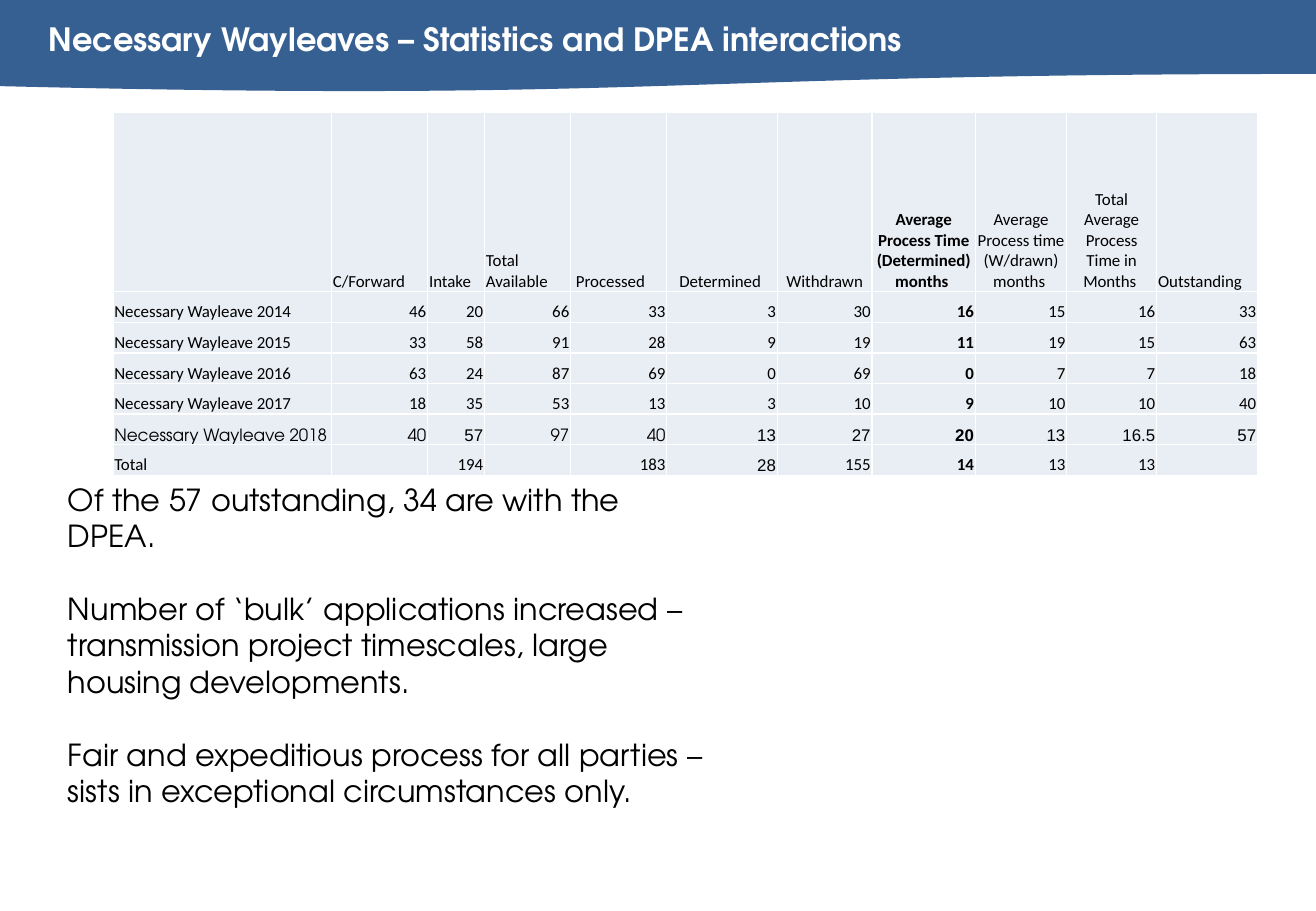
from lxml.etree import SubElement
from pptx import Presentation
from pptx.dml.color import RGBColor
from pptx.enum.shapes import MSO_SHAPE
from pptx.enum.text import MSO_ANCHOR, MSO_AUTO_SIZE, PP_ALIGN
from pptx.oxml.ns import qn
from pptx.util import Cm, Pt

TITLE = "Necessary Wayleaves – Statistics and DPEA interactions"
NOTES = [
    "Of the 57 outstanding, 34 are with the DPEA.",
    "Number of ‘bulk’ applications increased – transmission project "
    "timescales, large housing developments.",
    "Fair and expeditious process for all parties – sists in exceptional "
    "circumstances only.",
]
ROWS = [
    ("", "C/Forward", "Intake", "Total Available", " Processed",
     "Determined ", "Withdrawn", "Average Process Time (Determined) months ",
     "Average Process time (W/drawn) months ",
     "Total Average Process Time in Months ", "Outstanding"),
    ("Necessary Wayleave 2014", 46, 20, 66, 33, 3, 30, 16, 15, 16, 33),
    ("Necessary Wayleave 2015", 33, 58, 91, 28, 9, 19, 11, 19, 15, 63),
    ("Necessary Wayleave 2016", 63, 24, 87, 69, 0, 69, 0, 7, 7, 18),
    ("Necessary Wayleave 2017", 18, 35, 53, 13, 3, 10, 9, 10, 10, 40),
    ("Necessary Wayleave 2018", 40, 57, 97, 40, 13, 27, 20, 13, 16.5, 57),
    ("Total", "", 194, "", 183, 28, 155, 14, 13, 13, ""),
]
WIDTHS = [4.57, 2.01, 1.19, 1.8, 2.01, 2.31, 1.98, 2.16, 1.91, 1.88, 2.11]
HEAD, LINE = 3.76, 0.64
BOLD = 7
CENTRED = range(5, 10)
COLORS = {"banner": "376092", "cell": "E9EDF4", "white": "FFFFFF",
          "black": "000000"}
MAIN, PLAIN, GRID = "TeX Gyre Adventor", "Arial", "Calibri"


def color(name):
    return RGBColor.from_string(COLORS[name])


def style(font, tone="black", **values):
    for key, value in values.items():
        setattr(font, key, value)
    font.color.rgb = color(tone)


def face(row, col):
    """Typeface of a table cell; the latest year mixes two others."""
    if row == 5:
        return MAIN if col in (0, 1, 3, 4) else PLAIN
    return PLAIN if (row, col) == (6, 5) else GRID


def side(row, col):
    if row:
        return PP_ALIGN.RIGHT if col else PP_ALIGN.LEFT
    return PP_ALIGN.CENTER if col in CENTRED else PP_ALIGN.LEFT


def border(cell):
    props = cell._tc.get_or_add_tcPr()
    for tag in ("a:lnL", "a:lnR", "a:lnT", "a:lnB"):
        line = SubElement(props, qn(tag), w=str(Pt(1)))
        fill = SubElement(line, qn("a:solidFill"))
        SubElement(fill, qn("a:srgbClr"), val=COLORS["white"])


def fill_cell(cell, text, row, col):
    border(cell)
    cell.fill.solid()
    cell.fill.fore_color.rgb = color("cell")
    form = {"margin_left": Cm(0.03), "margin_right": Cm(0.03),
            "margin_top": Cm(0.03), "margin_bottom": 0,
            "vertical_anchor": MSO_ANCHOR.BOTTOM}
    for key, value in form.items():
        setattr(cell, key, value)
    para = cell.text_frame.paragraphs[0]
    para.alignment = side(row, col)
    if text == "":
        SubElement(para._p, qn("a:endParaRPr"), sz="1000")
        return
    run = para.add_run()
    run.text = str(text)
    style(run.font, name=face(row, col), size=Pt(10), bold=col == BOLD)


def add_title(slide):
    title = slide.shapes.title
    form = {"left": Cm(0.76), "top": Cm(0.13),
            "width": Cm(26.01), "height": Cm(1.37)}
    for key, value in form.items():
        setattr(title, key, value)
    frame = title.text_frame
    frame.text = TITLE
    frame.vertical_anchor = MSO_ANCHOR.MIDDLE
    para = frame.paragraphs[0]
    para.alignment = PP_ALIGN.LEFT
    style(para.runs[0].font, "white", name=MAIN, size=Pt(19), bold=True)

    banner = slide.shapes.add_shape(
        MSO_SHAPE.FLOWCHART_DOCUMENT, 0, 0, Cm(27.51), Cm(1.93))
    banner.shadow.inherit = False
    banner.fill.solid()
    banner.fill.fore_color.rgb = color("banner")
    banner.line.fill.background()
    title.element.addprevious(banner.element)


def add_notes(slide):
    box = slide.shapes.add_textbox(Cm(1.17), Cm(9.93), Cm(14), Cm(7.19))
    frame = box.text_frame
    frame.word_wrap = True
    frame.auto_size = MSO_AUTO_SIZE.SHAPE_TO_FIT_TEXT
    for i, text in enumerate(NOTES):
        para = frame.add_paragraph() if i else frame.paragraphs[0]
        if i:
            para.space_before = Pt(21.6)
        run = para.add_run()
        run.text = text
        style(run.font, name=MAIN, size=Pt(18))


def add_grid(slide):
    high = HEAD + LINE * (len(ROWS) - 1)
    table = slide.shapes.add_table(
        len(ROWS), len(WIDTHS), Cm(2.36), Cm(2.34),
        Cm(sum(WIDTHS)), Cm(high)).table
    table.first_row = table.horz_banding = False
    for column, width in zip(table.columns, WIDTHS):
        column.width = Cm(width)
    for i, row in enumerate(ROWS):
        table.rows[i].height = Cm(LINE if i else HEAD)
        for j, text in enumerate(row):
            fill_cell(table.cell(i, j), text, i, j)


def main():
    deck = Presentation()
    deck.slide_width, deck.slide_height = Cm(27.51), Cm(19.05)
    slide = deck.slides.add_slide(deck.slide_layouts[5])
    add_title(slide)
    add_notes(slide)
    add_grid(slide)
    deck.save("out.pptx")


if __name__ == "__main__":
    main()
